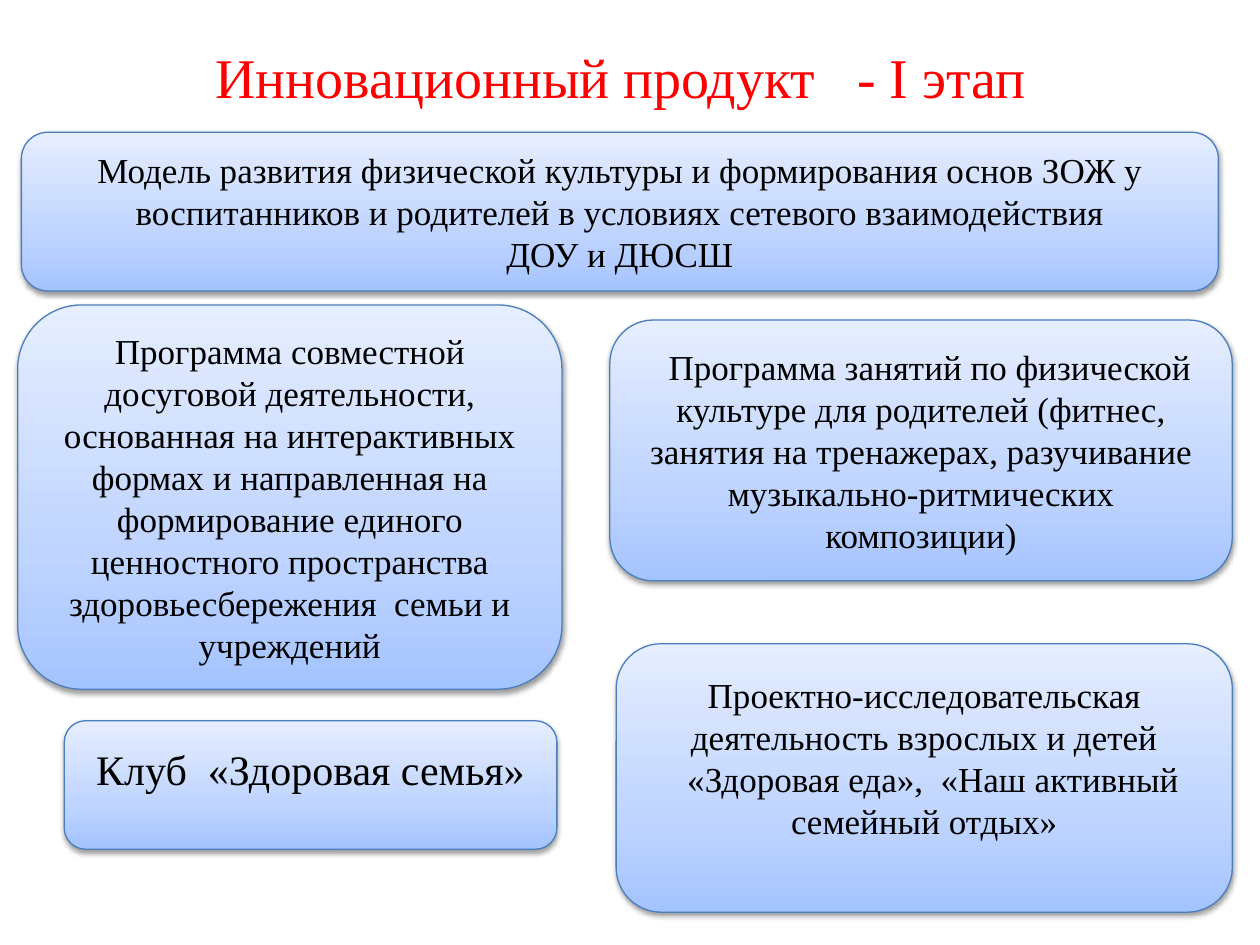
from lxml import etree
from pptx import Presentation
from pptx.dml.color import RGBColor
from pptx.enum.shapes import MSO_SHAPE as Shape
from pptx.enum.text import MSO_ANCHOR as Anchor, PP_ALIGN as Align
from pptx.oxml import parse_xml
from pptx.oxml.ns import nsdecls, qn
from pptx.util import Inches, Pt

FONT = "Times New Roman"
COLORS = {
    "title": "FF0000",
    "text": "000000",
    "border": "4B7EBC",
    "bottom": "A4C4FF",
    "middle": "BFD4FF",
    "top": "E6EEFF",
    "shadow": "000000",
}
GRADIENT_STOPS = [(0, "bottom"), (35, "middle"), (100, "top")]
FIRST_LINE_INDENT = Inches(0.14)


def color(name):
    return RGBColor.from_string(COLORS[name])


def write_text(text_frame, lines, size, color_name):
    text_frame.word_wrap = True
    text_frame.vertical_anchor = Anchor.MIDDLE
    text_frame.text = "\n".join(lines)
    for paragraph in text_frame.paragraphs:
        paragraph.alignment = Align.CENTER
        for run in paragraph.runs:
            run.font.name = FONT
            run.font.size = Pt(size)
            run.font.color.rgb = color(color_name)


def add_title(slide, text):
    box = slide.shapes.add_textbox(
        Inches(0.43), Inches(0.21), Inches(9), Inches(0.79))
    write_text(box.text_frame, [text], 32, "title")


def apply_gradient(shape):
    """Fill the shape with three stops running from bottom to top."""
    shape.fill.gradient()
    gradient = shape._element.spPr.find(qn("a:gradFill"))
    stops = "".join(
        f'<a:gs pos="{position * 1000}"><a:srgbClr val="{COLORS[name]}"/></a:gs>'
        for position, name in GRADIENT_STOPS)
    gradient.getparent().replace(gradient, parse_xml(
        f'<a:gradFill {nsdecls("a")} rotWithShape="1"><a:gsLst>{stops}</a:gsLst>'
        '<a:lin ang="16200000" scaled="0"/></a:gradFill>'))


def apply_shadow(shape):
    shape.shadow.inherit = False
    effects = shape._element.spPr.find(qn("a:effectLst"))
    shadow = etree.SubElement(
        effects, qn("a:outerShdw"), blurRad=str(Pt(3.1)), dist=str(Pt(1.6)),
        dir="5400000", rotWithShape="0")
    shade = etree.SubElement(shadow, qn("a:srgbClr"), val=COLORS["shadow"])
    etree.SubElement(shade, qn("a:alpha"), val="38000")


def add_card(slide, bounds, lines, size=20, bottom=0.05, indented=None):
    """Add a rounded card; indented is the index of a first-line-indented paragraph."""
    card = slide.shapes.add_shape(
        Shape.ROUNDED_RECTANGLE, *(Inches(value) for value in bounds))
    apply_gradient(card)
    card.line.color.rgb = color("border")
    card.line.width = Pt(0.75)
    apply_shadow(card)
    write_text(card.text_frame, lines, size, "text")
    card.text_frame.margin_bottom = Inches(bottom)
    if indented is not None:
        properties = card.text_frame.paragraphs[indented]._p.get_or_add_pPr()
        properties.set("indent", str(FIRST_LINE_INDENT))


def main():
    presentation = Presentation()
    presentation.slide_width = Inches(10)
    presentation.slide_height = Inches(7.5)
    slide = presentation.slides.add_slide(presentation.slide_layouts[6])

    add_title(slide, "Инновационный продукт   - I этап")
    add_card(slide, (0.17, 1.05, 9.5, 1.26), [
        "Модель развития физической культуры и формирования основ ЗОЖ у "
        "воспитанников и родителей в условиях сетевого взаимодействия",
        "ДОУ и ДЮСШ"])
    add_card(slide, (4.84, 2.54, 4.94, 2.07), [
        "Программа занятий по физической культуре для родителей (фитнес, "
        "занятия на тренажерах, разучивание музыкально-ритмических "
        "композиции)"], indented=0)
    add_card(slide, (0.14, 2.42, 4.32, 3.05), [
        "Программа совместной досуговой деятельности, основанная на "
        "интерактивных формах и направленная на формирование единого "
        "ценностного пространства здоровьесбережения  семьи и учреждений"])
    add_card(slide, (4.89, 5.11, 4.89, 2.13), [
        "Проектно-исследовательская деятельность взрослых и детей",
        "«Здоровая еда»,  «Наш активный семейный отдых»"],
        bottom=0.38, indented=1)
    add_card(slide, (0.51, 5.72, 3.91, 1.02), ["Клуб  «Здоровая семья»"],
             size=24, bottom=0.31)

    presentation.save("out.pptx")


if __name__ == "__main__":
    main()
